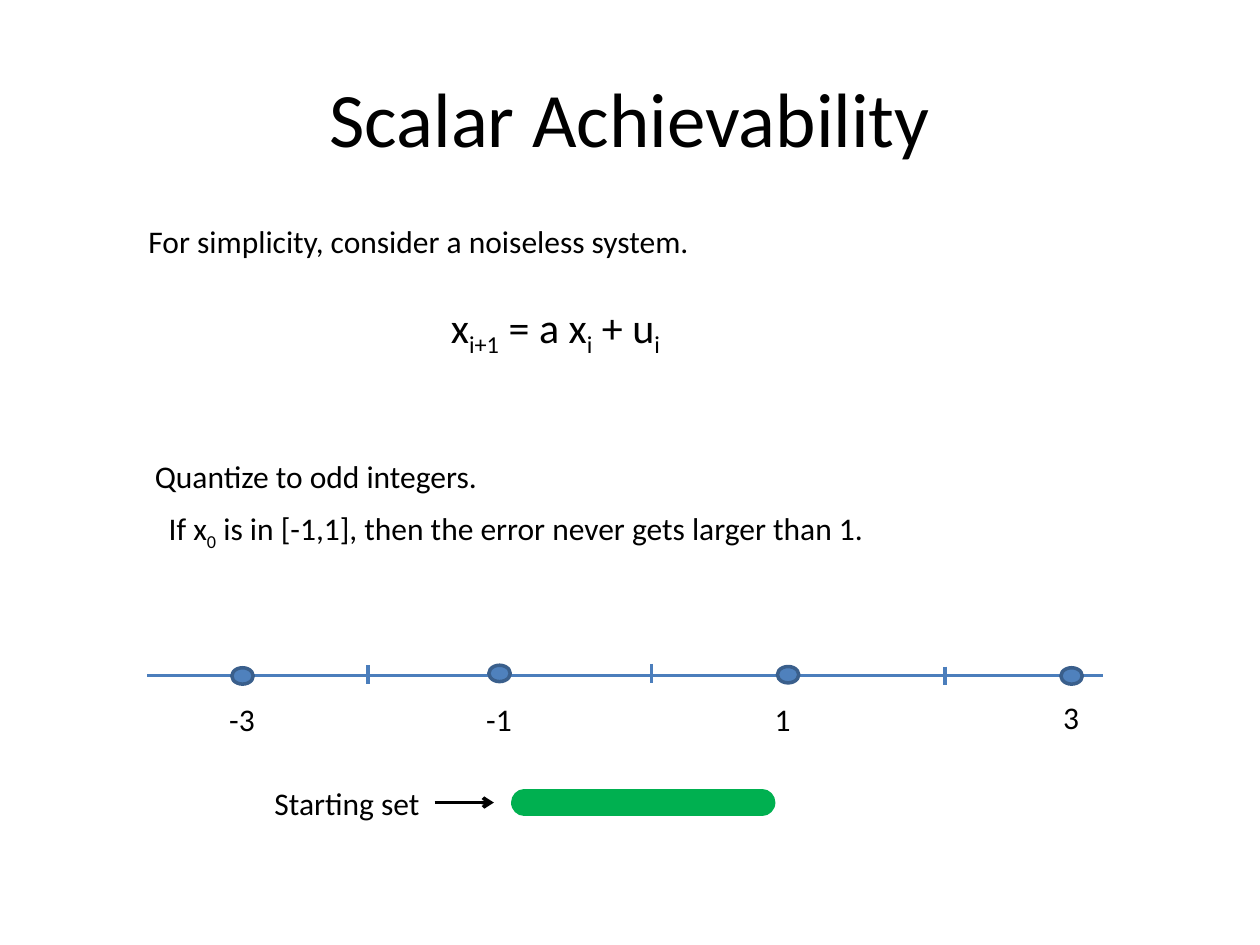
from dataclasses import dataclass

from lxml import etree
from pptx import Presentation
from pptx.dml.color import RGBColor
from pptx.enum.shapes import MSO_CONNECTOR, MSO_SHAPE
from pptx.enum.text import MSO_ANCHOR, MSO_AUTO_SIZE, PP_ALIGN
from pptx.oxml.ns import qn
from pptx.util import Inches, Pt

STRAIGHT = MSO_CONNECTOR.STRAIGHT
OVAL = MSO_SHAPE.OVAL
MIDDLE = MSO_ANCHOR.MIDDLE
GROW = MSO_AUTO_SIZE.SHAPE_TO_FIT_TEXT
CENTER = PP_ALIGN.CENTER
RIGHT_SIDE = 3

# The slide is a grid of square cells
COLUMNS, ROWS = 100, 75
CELL = Inches(0.1)


@dataclass(frozen=True)
class Theme:
    font: str = "Calibri"
    title_size: int = 44
    formula_size: int = 24
    body_size: int = 18
    ink: str = "000000"
    axis: str = "4B7EBC"
    dot: str = "4F81BD"
    dot_edge: str = "3A5F8C"
    interval: str = "00B050"
    line_width: int = 2
    interval_width: int = 15


THEME = Theme()

# Text boxes: left, top, width, height, size, spans (odd spans are subscripts)
TEXTS = (
    (11.3, 35.8, 27.9, 4, THEME.body_size, ["Quantize to odd integers."]),
    (34.8, 23.4, 20, 5, THEME.formula_size,
     ["x", "i+1", " = a x", "i", " + u", "i"]),
    (10.8, 17.1, 45.4, 4, THEME.body_size,
     ["For simplicity, consider a noiseless system."]),
    (12.4, 39.9, 58.5, 4, THEME.body_size,
     ["If x", "0", " is in [-1,1], then the error never gets larger than 1."]),
)

# Quantizer points: dot left and top, then label, its left, top and width
POINTS = (
    (18.4, 53, "-3", 17.2, 55.1, 4.1),
    (38.8, 52.8, "-1", 37.6, 55.1, 4.1),
    (61.7, 52.9, "1", 60.5, 55.1, 3.3),
    (84.2, 53, "3", 83.4, 54.9, 3.3),
)
DOT_WIDTH, DOT_HEIGHT = 1.7, 1.3

# Cell boundaries: column and top row
TICKS = ((29.2, 52.8), (51.7, 52.7), (75, 52.9))
TICK_HEIGHT = 1.5
AXIS_ROW = 53.6
SET_ROW = 63.7


def cells(*counts):
    return [round(count * CELL) for count in counts]


def add_text(shapes, left, top, width, height, size, spans):
    box = shapes.add_textbox(*cells(left, top, width, height))
    frame = box.text_frame
    frame.word_wrap = False
    frame.auto_size = GROW
    para = frame.paragraphs[0]
    for index, words in enumerate(spans):
        span = para.add_run()
        span.text = words
        span.font.name = THEME.font
        span.font.size = Pt(size)
        span.font.color.rgb = RGBColor.from_string(THEME.ink)
        if index % 2:
            span.font._element.set("baseline", "-25000")
    return box


def add_title(shapes, words):
    box = add_text(shapes, 5, 3, 90, 12.5, THEME.title_size, [words])
    frame = box.text_frame
    frame.auto_size = MSO_AUTO_SIZE.NONE
    frame.word_wrap = True
    frame.vertical_anchor = MIDDLE
    frame.paragraphs[0].alignment = CENTER


def add_line(shapes, start, end, color, width=THEME.line_width):
    line = shapes.add_connector(STRAIGHT, *cells(*start, *end))
    line.line.color.rgb = RGBColor.from_string(color)
    line.line.width = Pt(width)
    etree.SubElement(line._element.spPr, qn("a:effectLst"))
    return line


def add_dot(shapes, left, top):
    dot = shapes.add_shape(OVAL, *cells(left, top, DOT_WIDTH, DOT_HEIGHT))
    dot.shadow.inherit = False
    dot.fill.solid()
    dot.fill.fore_color.rgb = RGBColor.from_string(THEME.dot)
    dot.line.color.rgb = RGBColor.from_string(THEME.dot_edge)
    dot.line.width = Pt(THEME.line_width)


def add_number_line(shapes):
    add_line(shapes, (11.7, AXIS_ROW), (87.5, AXIS_ROW), THEME.axis)
    for dot_left, dot_top, label, left, top, width in POINTS:
        add_dot(shapes, dot_left, dot_top)
        add_text(shapes, left, top, width, 4, THEME.body_size, [label])
    for column, row in TICKS:
        add_line(shapes, (column, row), (column, row + TICK_HEIGHT), THEME.axis)


def add_starting_set(shapes):
    # Thick interval with round ends
    interval = add_line(shapes, (41.6, SET_ROW), (60.5, SET_ROW),
                        THEME.interval, THEME.interval_width)
    interval.line._get_or_add_ln().set("cap", "rnd")

    # Caption with an arrow towards the interval
    caption = add_text(shapes, 20.8, 61.7, 13.7, 4, THEME.body_size,
                       ["Starting set"])
    arrow = add_line(shapes, (34.5, SET_ROW), (39.2, SET_ROW), THEME.ink)
    arrow.begin_connect(caption, RIGHT_SIDE)
    etree.SubElement(arrow.line._get_or_add_ln(), qn("a:tailEnd"), type="arrow")


def main():
    deck = Presentation()
    deck.slide_width, deck.slide_height = cells(COLUMNS, ROWS)
    page = deck.slides.add_slide(deck.slide_layouts[6])

    add_title(page.shapes, "Scalar Achievability")
    for text in TEXTS:
        add_text(page.shapes, *text)
    add_number_line(page.shapes.add_group_shape().shapes)
    add_starting_set(page.shapes)

    deck.save("out.pptx")


if __name__ == "__main__":
    main()
